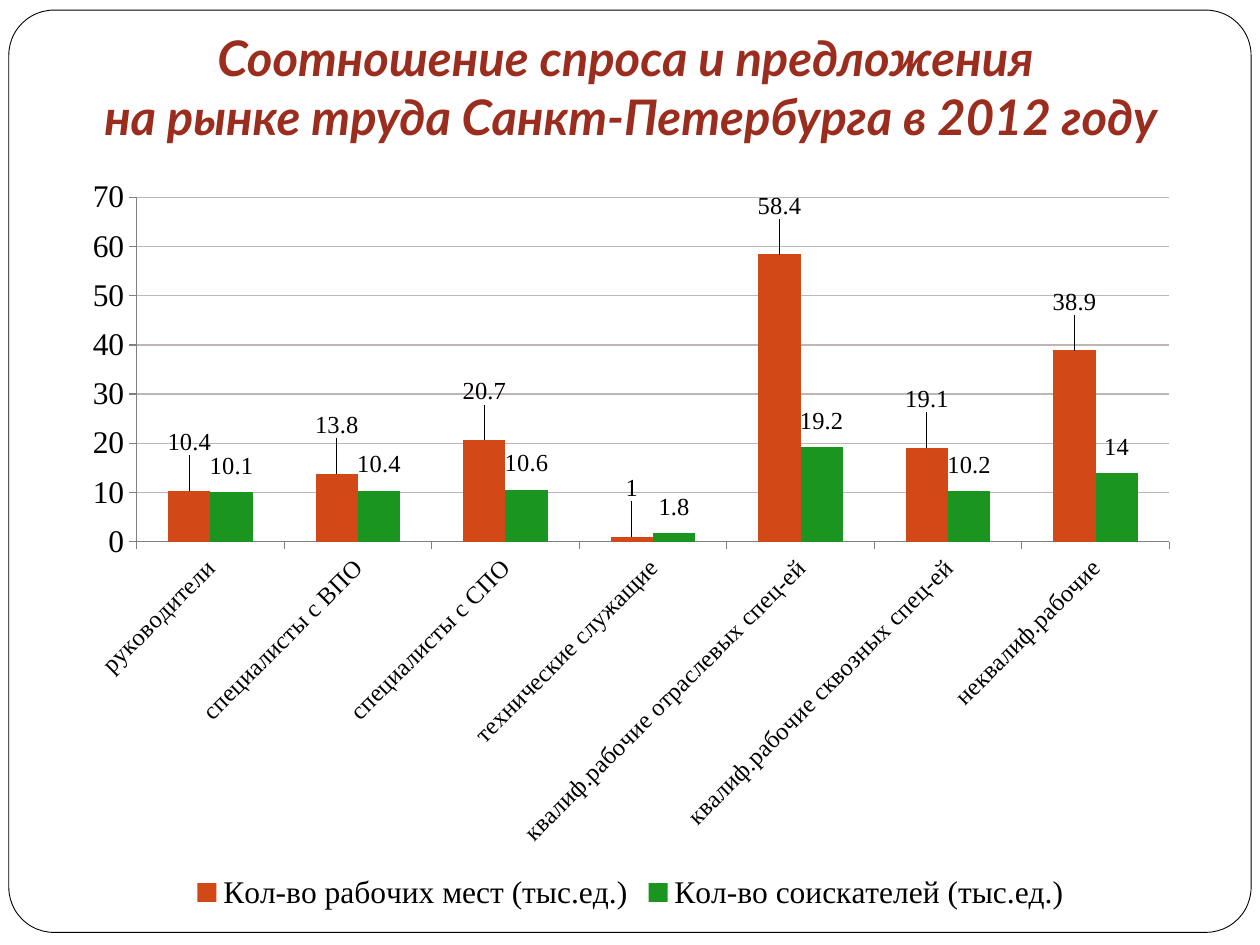
from typing import NamedTuple

from lxml.etree import SubElement
from pptx import Presentation
from pptx.chart.data import CategoryChartData
from pptx.dml.color import RGBColor
from pptx.enum.chart import XL_CHART_TYPE as ChartType
from pptx.enum.chart import XL_LABEL_POSITION as LabelPosition
from pptx.enum.chart import XL_LEGEND_POSITION as LegendPosition
from pptx.enum.chart import XL_TICK_MARK as TickMark
from pptx.enum.shapes import MSO_SHAPE as Shape
from pptx.enum.text import MSO_ANCHOR as Anchor
from pptx.enum.text import PP_ALIGN as Align
from pptx.oxml import parse_xml
from pptx.oxml.ns import nsdecls, qn
from pptx.util import Inches, Pt

WHITE = RGBColor(0xFF, 0xFF, 0xFF)
BLACK = RGBColor(0x00, 0x00, 0x00)
TITLE_RED = RGBColor(0x9B, 0x2D, 0x1F)
JOBS_ORANGE = RGBColor(0xD3, 0x48, 0x17)
SEEKERS_GREEN = RGBColor(0x1A, 0x96, 0x20)
GRID_GREY = RGBColor(0xBD, 0xB5, 0xB6)
AXIS_GREY = RGBColor(0x80, 0x80, 0x80)
CHART_FONT = "Times New Roman"
SMALL = Pt(14)


class Series(NamedTuple):
    name: str
    values: tuple[float, ...]
    color: RGBColor
    label_lift: float  # share of the chart height


CATEGORIES = (
    "руководители", "специалисты с ВПО", "специалисты с СПО",
    "технические служащие", "квалиф.рабочие отраслевых спец-ей",
    "квалиф.рабочие сквозных спец-ей", "неквалиф.рабочие",
)
SERIES = (
    Series("Кол-во рабочих мест (тыс.ед.)",
           (10.4, 13.8, 20.7, 1, 58.4, 19.1, 38.9), JOBS_ORANGE, 0.04),
    Series("Кол-во соискателей (тыс.ед.)",
           (10.1, 10.4, 10.6, 1.8, 19.2, 10.2, 14), SEEKERS_GREEN, 0.01),
)


def manual_layout(target: str = "", **parts: float):
    """Make a c:layout element from fractions of the chart area."""
    layout = parse_xml(f"<c:layout {nsdecls('c')}><c:manualLayout/></c:layout>")
    manual = layout[0]
    if target:
        SubElement(manual, qn("c:layoutTarget")).set("val", target)
        for mode in ("xMode", "yMode"):
            SubElement(manual, qn(f"c:{mode}")).set("val", "edge")
    for part, value in parts.items():
        SubElement(manual, qn(f"c:{part}")).set("val", str(value))
    return layout


def add_frame(page) -> None:
    frame = page.shapes.add_shape(Shape.ROUNDED_RECTANGLE, Inches(0.07),
                                  Inches(0.08), Inches(9.86), Inches(7.32))
    frame.adjustments[0] = 0.049
    frame.shadow.inherit = False
    frame.fill.solid()
    frame.fill.fore_color.rgb = WHITE
    frame.line.color.rgb = BLACK
    frame.line.width = Pt(0.5)
    page.shapes._spTree.insert(2, frame._element)  # behind the title


def fill_title(page) -> None:
    title = page.shapes.title
    title.left, title.top = Inches(0.55), Inches(0.23)
    title.width, title.height = Inches(8.91), Inches(1.02)
    box = title.text_frame
    box.vertical_anchor = Anchor.BOTTOM
    box.margin_bottom = Inches(0.1)
    box.text = ("Соотношение спроса и предложения \v"
                "на рынке труда Санкт-Петербурга в 2012 году")
    para = box.paragraphs[0]
    para.alignment = Align.CENTER
    para.line_spacing = 1.0
    font = para.font
    font.name, font.size = "Lato", Pt(28)
    font.bold = font.italic = True
    font.color.rgb = TITLE_RED


def style_series(plot_series, series: Series) -> None:
    plot_series.format.fill.solid()
    plot_series.format.fill.fore_color.rgb = series.color
    plot_series.invert_if_negative = False
    labels = plot_series.data_labels
    labels.show_value = True
    labels.position = LabelPosition.OUTSIDE_END
    labels.font.size, labels.font.name = SMALL, CHART_FONT
    # Raise each label above its bar
    for index in range(len(series.values)):
        label = plot_series.points[index].data_label
        label.font.size, label.font.name = SMALL, CHART_FONT
        label.position = LabelPosition.OUTSIDE_END
    for element in labels._element.findall(qn("c:dLbl")):
        element.insert(1, manual_layout(x=0, y=-series.label_lift))


def add_chart(page) -> None:
    data = CategoryChartData()
    data.categories = CATEGORIES
    for series in SERIES:
        data.add_series(series.name, series.values)
    chart = page.shapes.add_chart(
        ChartType.COLUMN_CLUSTERED, Inches(0.55), Inches(1.33),
        Inches(8.91), Inches(5.94), data).chart
    chart.has_title = False
    chart.font.name, chart.font.size = CHART_FONT, Pt(18)
    chart.font.color.rgb = BLACK

    # Legend
    chart.has_legend = True
    chart.legend.position = LegendPosition.BOTTOM
    chart.legend.include_in_layout = False

    # Axes
    for axis in (chart.category_axis, chart.value_axis):
        axis.major_tick_mark = TickMark.OUTSIDE
        axis.format.line.color.rgb = AXIS_GREY
    names = chart.category_axis.tick_labels
    names.font.size = SMALL
    names._element.find(qn("c:txPr")).find(qn("a:bodyPr")).set("rot", "-2700000")
    values = chart.value_axis
    values.minimum_scale, values.maximum_scale, values.major_unit = 0, 70, 10
    grid = values.major_gridlines.format.line
    grid.color.rgb, grid.width = GRID_GREY, Pt(0.75)

    # Columns
    plot = chart.plots[0]
    plot.vary_by_categories = False
    plot.gap_width, plot.overlap = 150, 0
    for plot_series, series in zip(plot.series, SERIES):
        style_series(plot_series, series)
    area = chart._chartSpace.chart.plotArea
    for layout in area.findall(qn("c:layout")):
        area.remove(layout)
    area.insert(0, manual_layout("inner", x=0.06, y=0.04, w=0.92, h=0.46))


def main() -> None:
    deck = Presentation()
    deck.slide_width, deck.slide_height = Inches(10), Inches(7.5)
    page = deck.slides.add_slide(deck.slide_layouts[5])
    add_frame(page)
    fill_title(page)
    add_chart(page)
    deck.save("out.pptx")


if __name__ == "__main__":
    main()
